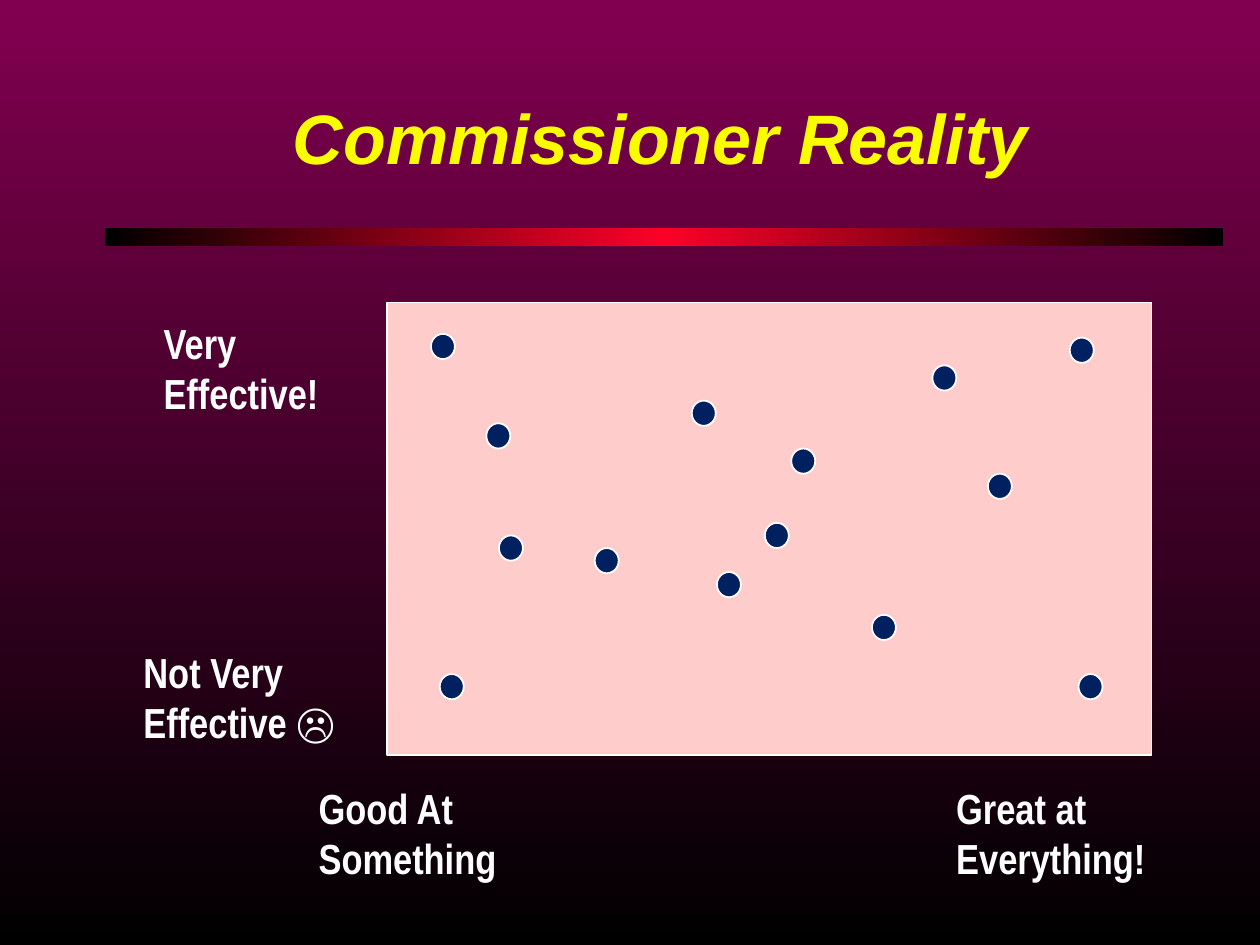
from copy import deepcopy

from pptx import Presentation
from pptx.dml.color import RGBColor
from pptx.enum.shapes import MSO_SHAPE as Shape
from pptx.enum.text import MSO_ANCHOR as Anchor, MSO_AUTO_SIZE as AutoSize, PP_ALIGN as Align
from pptx.oxml.ns import qn
from pptx.util import Inches, Pt

COLORS = {
    "plum": "820050",
    "black": "000000",
    "red": "FC0128",
    "yellow": "FAFD00",
    "pink": "FFCCCC",
    "navy": "002060",
    "white": "FFFFFF",
}
DOT_SIZE = (0.19, 0.2)
DOTS = [
    (3.42, 2.65), (5.49, 3.18), (5.69, 4.54), (3.49, 5.35), (4.72, 4.35),
    (6.28, 3.56), (6.07, 4.15), (7.4, 2.9), (8.49, 2.68), (7.84, 3.76),
    (8.56, 5.35), (3.86, 3.36), (6.92, 4.88), (3.96, 4.25),
]
AXIS_LABELS = [
    ("Very Effective!", 1.2, 2.47, 1.6),
    ("Not Very Effective ☹", 1.04, 5.08, 2.16),
    ("Good At Something", 2.43, 6.16, 1.99),
    ("Great at Everything!", 7.49, 6.16, 1.99),
]


def rgb(name):
    return RGBColor.from_string(COLORS[name])


class SlideBuilder:
    """Holds the slide and the style shared by its elements."""

    def __init__(self, page):
        self.page = page

    def set_gradient(self, fill, element, names, angle):
        """Spread the named colours evenly; angle is counter-clockwise."""
        fill.gradient()
        fill.gradient_angle = angle
        stop_list = element.find(".//" + qn("a:gsLst"))
        while len(stop_list) < len(names):
            stop_list.append(deepcopy(stop_list[0]))
        for index, (stop, name) in enumerate(zip(fill.gradient_stops, names)):
            stop.position = index / (len(names) - 1)
            stop.color.rgb = rgb(name)

    def background(self, names, angle):
        self.set_gradient(self.page.background.fill, self.page.element, names, angle)

    def title(self, text, left, top, width, height):
        box = self.page.shapes.title
        box.left, box.top = Inches(left), Inches(top)
        box.width, box.height = Inches(width), Inches(height)
        box.text_frame.text = text
        box.text_frame.vertical_anchor = Anchor.MIDDLE
        para = box.text_frame.paragraphs[0]
        para.alignment = Align.CENTER
        self.set_font(para, "Arial", 40, "yellow")
        para.font.italic = True

    def set_font(self, para, name, size, color):
        para.font.name = name
        para.font.size = Pt(size)
        para.font.bold = True
        para.font.color.rgb = rgb(color)

    def add_shape(self, kind, left, top, width, height):
        shape = self.page.shapes.add_shape(
            kind, Inches(left), Inches(top), Inches(width), Inches(height))
        shape.shadow.inherit = False
        return shape

    def gradient_bar(self, names, *place):
        bar = self.add_shape(Shape.RECTANGLE, *place)
        self.set_gradient(bar.fill, bar.element, names, 0)
        bar.line.fill.background()

    def outlined_shape(self, kind, color, *place):
        shape = self.add_shape(kind, *place)
        shape.fill.solid()
        shape.fill.fore_color.rgb = rgb(color)
        shape.line.color.rgb = rgb("white")
        shape.line.width = Pt(1)

    def label(self, text, left, top, width, height=0.91):
        box = self.page.shapes.add_textbox(
            Inches(left), Inches(top), Inches(width), Inches(height))
        frame = box.text_frame
        frame.word_wrap = True
        frame.auto_size = AutoSize.SHAPE_TO_FIT_TEXT
        frame.text = text
        self.set_font(frame.paragraphs[0], "Arial Narrow", 24, "white")


def main():
    deck = Presentation()
    deck.slide_width, deck.slide_height = Inches(10), Inches(7.5)
    builder = SlideBuilder(deck.slides.add_slide(deck.slide_layouts[5]))

    builder.background(["plum", "black"], 270)
    builder.gradient_bar(["black", "red", "black"], 0.83, 1.81, 8.88, 0.14)
    builder.title("Commissioner Reality", 0.76, 0.46, 8.96, 1.25)
    builder.outlined_shape(Shape.RECTANGLE, "pink", 3.07, 2.4, 6.07, 3.59)
    for axis_label in AXIS_LABELS:
        builder.label(*axis_label)
    for dot in DOTS:
        builder.outlined_shape(Shape.OVAL, "navy", *dot, *DOT_SIZE)

    deck.save("out.pptx")


if __name__ == "__main__":
    main()
